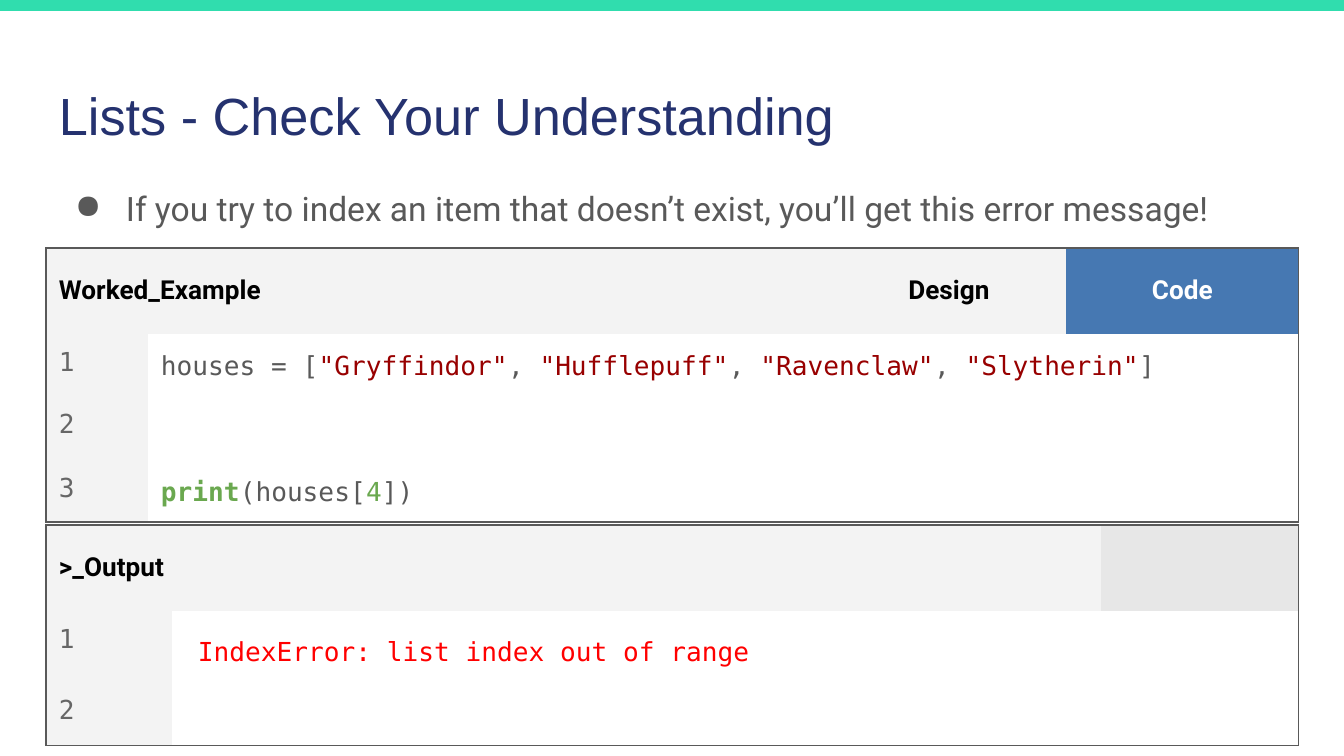
"""Build the slide on list indexing errors with its code and output panels."""
from dataclasses import dataclass

from lxml.etree import SubElement
from pptx import Presentation
from pptx.dml.color import RGBColor
from pptx.enum.shapes import MSO_SHAPE as Shape
from pptx.enum.text import MSO_ANCHOR as Anchor, PP_ALIGN as Align
from pptx.oxml.ns import qn
from pptx.util import Pt

SCALE = 914400 / 134.4


def px(value):
    return round(value * SCALE)


@dataclass(frozen=True)
class Theme:
    title: str = "25326F"
    accent: str = "30DDAE"
    text: str = "595959"
    number: str = "666666"
    string: str = "980000"
    keyword: str = "6AA84F"
    error: str = "FF0000"
    black: str = "000000"
    white: str = "FFFFFF"
    panel: str = "F3F3F3"
    active: str = "4678B2"
    idle: str = "E7E7E7"
    heading_font: str = "Arial"
    body_font: str = "Roboto"
    code_font: str = "DejaVu Sans Mono"
    title_size: int = 28
    body_size: int = 18
    code_size: int = 14
    border: float = 0.75
    inset: int = 13


class SlideBuilder:
    def __init__(self, slide, theme):
        self.slide, self.theme = slide, theme

    def set_format(self, target, values):
        for name, value in values.items():
            setattr(target, name, value)

    def fill(self, target, color):
        target.fill.solid()
        target.fill.fore_color.rgb = RGBColor.from_string(color)

    def add_runs(self, paragraph, runs, font, size, bold=False, **layout):
        indent = layout.pop("indent", 0)
        self.set_format(paragraph, layout)
        if indent:
            paragraph._p.get_or_add_pPr().set("marL", str(px(indent)))
        for text, color, *weight in runs:
            run = paragraph.add_run()
            run.text = text
            self.set_format(run.font, {"name": font, "size": Pt(size), "bold": bold or bool(weight)})
            run.font.color.rgb = RGBColor.from_string(color)

    def insets(self):
        sides = ("left", "right", "top", "bottom")
        return {f"margin_{side}": px(self.theme.inset) for side in sides}

    def bar(self, box, color):
        shape = self.slide.shapes.add_shape(Shape.RECTANGLE, *map(px, box))
        shape.shadow.inherit = False
        self.fill(shape, color)
        shape.line.fill.background()

    def text(self, box, runs, font, size, **layout):
        frame = self.slide.shapes.add_textbox(*map(px, box)).text_frame
        self.set_format(frame, {"word_wrap": True, **self.insets()})
        self.add_runs(frame.paragraphs[0], runs, font, size, **layout)
        return frame.paragraphs[0]

    def bullet(self, box, text):
        theme = self.theme
        paragraph = self.text(box, [(text, theme.text)], theme.body_font,
                              theme.body_size, indent=67, line_spacing=1.15)
        properties = paragraph._p.get_or_add_pPr()
        properties.set("indent", str(px(-51)))
        color = SubElement(properties, qn("a:buClr"))
        SubElement(color, qn("a:srgbClr")).set("val", theme.text)
        SubElement(properties, qn("a:buChar")).set("char", "●")

    def borders(self, cell, visible):
        properties = cell._tc.get_or_add_tcPr()
        for position, side in enumerate("LRTB"):
            line = SubElement(properties, qn(f"a:ln{side}"))
            properties.insert(position, line)
            if side in visible:
                line.set("w", str(int(Pt(self.theme.border))))
                color = SubElement(line, qn("a:solidFill"))
                SubElement(color, qn("a:srgbClr")).set("val", self.theme.text)
            else:
                SubElement(line, qn("a:noFill"))

    def cell_text(self, cell, runs, font, **layout):
        self.set_format(cell, self.insets())
        self.add_runs(cell.text_frame.paragraphs[0], runs, font, self.theme.code_size, **layout)

    def panel(self, left, top, widths, heights, tabs, lines):
        """Draw a bordered table with a tab row above numbered lines."""
        theme = self.theme
        last_row, last_column = len(heights) - 1, len(widths) - 1
        box = map(px, (left, top, sum(widths), sum(heights)))
        table = self.slide.shapes.add_table(len(heights), len(widths), *box).table
        self.set_format(table, {"first_row": False, "horz_banding": False})
        for column, width in zip(table.columns, widths):
            column.width = px(width)
        for row, height in zip(table.rows, heights):
            row.height = px(height)
        for row in range(last_row + 1):
            for column in range(last_column + 1):
                cell = table.cell(row, column)
                self.fill(cell, theme.white if row and column else theme.panel)
                at_right = column == last_column or (row and column == 1)
                edges = {"L": column == 0, "R": at_right, "T": row == 0, "B": row == last_row}
                self.borders(cell, {side for side, outer in edges.items() if outer})
        table.cell(0, 0).merge(table.cell(0, 1))
        for column, (text, color, background, align) in tabs.items():
            cell = table.cell(0, column)
            self.fill(cell, background)
            if text:
                cell.vertical_anchor = Anchor.MIDDLE
                self.cell_text(cell, [(text, color)], theme.body_font, bold=True, alignment=align)
        for row, (runs, layout) in enumerate(lines, 1):
            self.cell_text(table.cell(row, 0), [(str(row), theme.number)], theme.code_font)
            table.cell(row, 1).merge(table.cell(row, last_column))
            if runs:
                self.cell_text(table.cell(row, 1), runs, theme.code_font, **layout)


def main():
    theme = Theme()
    presentation = Presentation()
    presentation.slide_width, presentation.slide_height = px(1344), px(756)
    builder = SlideBuilder(presentation.slides.add_slide(presentation.slide_layouts[6]), theme)

    builder.text((46, 70, 1253, 85), [("Lists - Check Your Understanding", theme.title)],
                 theme.heading_font, theme.title_size)
    builder.bar((0, 0, 1344, 11), theme.accent)
    builder.bullet((46, 169, 1253, 122),
                   "If you try to index an item that doesn’t exist, you’ll get this error message!")

    houses = [("houses = [", theme.text)]
    for index, name in enumerate(("Gryffindor", "Hufflepuff", "Ravenclaw", "Slytherin")):
        if index:
            houses.append((",", theme.text))
        houses.append((f'{" " if index else ""}"{name}"', theme.string))
    houses.append(("]", theme.text))
    call = [("print", theme.keyword, True), ("(houses[", theme.text),
            ("4", theme.keyword), ("])", theme.text)]
    code = {"line_spacing": 1.15, "space_after": Pt(12)}

    builder.panel(46, 248, (102, 433, 251, 234, 233), (86, 62, 64, 62),
                  {0: ("Worked_Example", theme.black, theme.panel, Align.LEFT),
                   3: ("Design", theme.black, theme.panel, Align.CENTER),
                   4: ("Code", theme.white, theme.active, Align.CENTER)},
                  [(houses, code), ([], {}), (call, code)])
    error = [("IndexError: list index out of range", theme.error)]
    builder.panel(46, 525, (126, 531, 398, 198), (86, 70, 64),
                  {0: (">_Output", theme.black, theme.panel, Align.LEFT),
                   3: ("", theme.black, theme.idle, Align.LEFT)},
                  [(error, {"indent": 13, "line_spacing": 1.43}), ([], {})])
    presentation.save("out.pptx")


if __name__ == "__main__":
    main()
